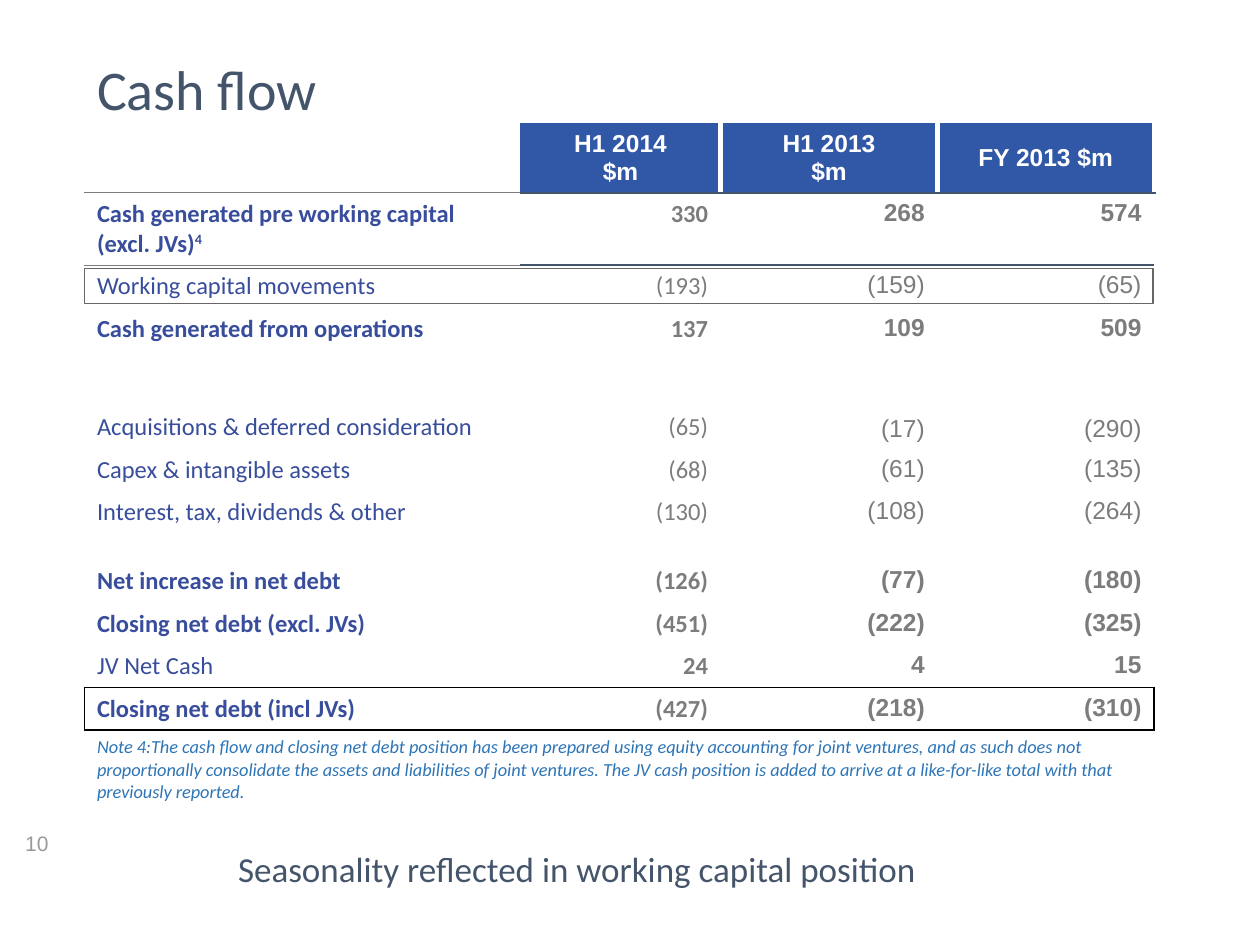
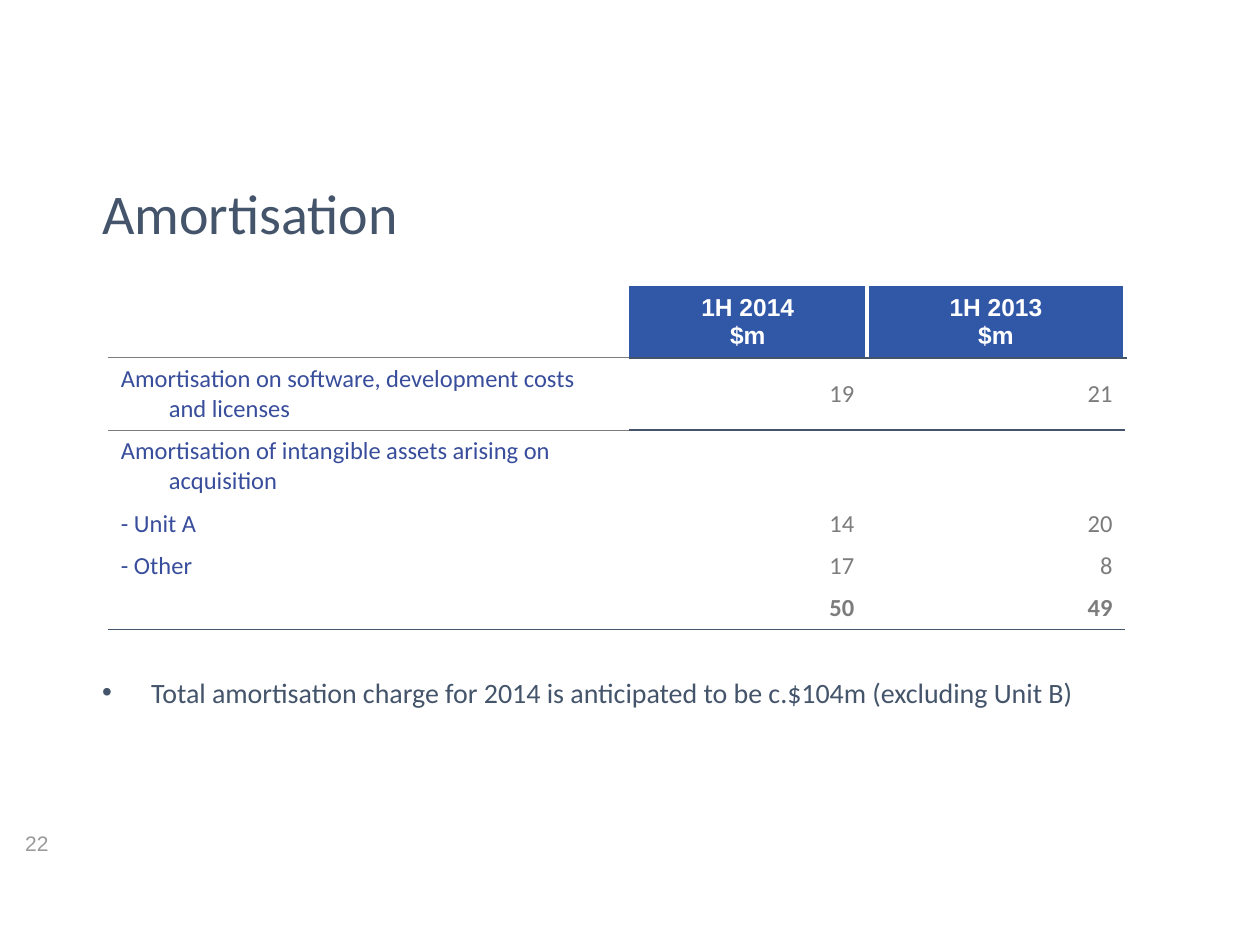
from lxml import etree
from pptx import Presentation
from pptx import util as u
from pptx.dml.color import RGBColor
from pptx.enum import shapes, text
from pptx.oxml.ns import qn

# Shared look
SLATE, BLUE, LABEL, GREY = "44546A", "3157A7", "384D9B", "7C7C7C"
WHITE, BLACK, FRAME, NOTE_BLUE, PAGE_GREY = "FFFFFF", "000000", "666666", "2E75B6", "9A9A9A"
NO_GRID_STYLE = "{2D5ABB26-0587-4C30-8999-92F81FD0307C}"
LEFT, CENTRE, RIGHT = text.PP_ALIGN.LEFT, text.PP_ALIGN.CENTER, text.PP_ALIGN.RIGHT
TOP, MIDDLE, BOTTOM = text.MSO_ANCHOR.TOP, text.MSO_ANCHOR.MIDDLE, text.MSO_ANCHOR.BOTTOM

# Cash flow: label, values, row height, bold label, bold values
CASH_HEADERS = ["", "H1 2014\n$m", "H1 2013\n$m", "FY 2013 $m"]
CASH_WIDTHS = [3.46, 1.59, 1.72, 1.72]
CASH_ROWS = [
    ("Cash generated pre working capital (excl. JVs)^4", ["330", "268", "574"], 0.55, True, True),
    ("Working capital movements", ["(193)", "(159)", "(65)"], 0.33, False, False),
    ("Cash generated from operations", ["137", "109", "509"], 0.55, True, True),
    ("Acquisitions & deferred consideration", ["(65)", "(17)", "(290)"], 0.57, False, False),
    ("Capex & intangible assets", ["(68)", "(61)", "(135)"], 0.33, False, False),
    ("Interest, tax, dividends & other", ["(130)", "(108)", "(264)"], 0.55, False, False),
    ("Net increase in net debt", ["(126)", "(77)", "(180)"], 0.33, True, True),
    ("Closing net debt (excl. JVs)", ["(451)", "(222)", "(325)"], 0.33, True, True),
    ("JV Net Cash", ["24", "4", "15"], 0.33, False, True),
    ("Closing net debt (incl JVs)", ["(427)", "(218)", "(310)"], 0.33, True, True),
]
ACQUISITIONS_ROW, CLOSING_ROW, NOTE_ROW = 4, 10, 11
CASH_NOTE = (
    "Note 4:The cash flow and closing net debt position has been prepared using equity accounting "
    "for joint ventures, and as such does not proportionally consolidate the assets and liabilities "
    "of joint ventures. The JV cash position is added to arrive at a like-for-like total with that "
    "previously reported.")
CASH_MESSAGE = "Seasonality reflected in working capital position"

# Amortisation
AMORTISATION_HEADERS = ["", "1H 2014\n$m", "1H 2013\n$m"]
AMORTISATION_WIDTHS = [4.13, 1.89, 2.05]
AMORTISATION_ROWS = [
    ("Amortisation on software, development costs and licenses", ["19", "21"], 0.57, False, False),
    ("Amortisation of intangible assets arising on acquisition", ["", ""], 0.57, False, False),
    ("- Unit A", ["14", "20"], 0.33, False, False),
    ("- Other", ["17", "8"], 0.33, False, False),
    ("", ["50", "49"], 0.33, False, True),
    ("", ["", ""], 0.33, False, False),
]
TOTAL_ROW = 5
AMORTISATION_BULLET = "Total amortisation charge for 2014 is anticipated to be c.$104m (excluding Unit B)"


def colour(value):
    return RGBColor.from_string(value)


def write(frame, content, size=14, font="Calibri", ink=SLATE, bold=False, italic=False,
          align=LEFT, spacing=None, hang=0, bullet=None):
    """One paragraph per line; text after ^ is superscript."""
    for index, line in enumerate(content.split("\n")):
        para = frame.paragraphs[0] if index == 0 else frame.add_paragraph()
        para.alignment = align
        para.space_before = u.Pt(0)
        if spacing:
            para.line_spacing = spacing
        properties = para._p.get_or_add_pPr()
        properties.set("marL", str(u.Inches(hang)))
        properties.set("indent", str(-u.Inches(hang)))
        if bullet:
            etree.SubElement(properties, qn("a:buFont"), typeface="Arial")
            etree.SubElement(properties, qn("a:buChar"), char=bullet)
        else:
            etree.SubElement(properties, qn("a:buNone"))
        if not line:
            etree.SubElement(para._p, qn("a:endParaRPr"), sz=str(size * 100))
            continue
        for part, words in enumerate(line.split("^")):
            span = para.add_run()
            span.text = words
            span.font.size, span.font.name = u.Pt(size), font
            span.font.bold, span.font.italic = bold, italic
            span.font.color.rgb = colour(ink)
            if part:
                span._r.get_or_add_rPr().set("baseline", "30000")


def place(shape, left, top, width, height):
    shape.left, shape.top = u.Inches(left), u.Inches(top)
    shape.width, shape.height = u.Inches(width), u.Inches(height)


def set_frame(frame, anchor=TOP, inset=None):
    frame.word_wrap = True
    frame.auto_size = text.MSO_AUTO_SIZE.NONE
    frame.vertical_anchor = anchor
    if inset is not None:
        frame.margin_left = frame.margin_right = u.Inches(inset)
        frame.margin_top = frame.margin_bottom = u.Inches(inset)


def add_page(deck, title, title_at, number):
    page = deck.slides.add_slide(deck.slide_layouts[1])
    place(page.shapes.title, *title_at)
    set_frame(page.shapes.title.text_frame, MIDDLE)
    write(page.shapes.title.text_frame, title, size=32, spacing=0.9)
    box = page.shapes.add_textbox(0, 0, 0, 0)
    place(box, 0.2, 6.59, 0.28, 0.43)
    set_frame(box.text_frame, inset=0)
    box.text_frame.word_wrap = False
    write(box.text_frame, number, size=12, font="Arial", ink=PAGE_GREY)
    return page


def rule_below(edges, row, columns, ink, width):
    for column in columns:
        edges.setdefault((row, column), {})["B"] = (ink, width)
        edges.setdefault((row + 1, column), {})["T"] = (ink, width)


def draw_edges(cell, sides):
    properties = cell._tc.get_or_add_tcPr()
    for side in "LRTB":
        if side in sides:
            ink, width = sides[side]
            line = etree.SubElement(properties, qn("a:ln" + side), w=str(u.Pt(width)))
            fill = etree.SubElement(line, qn("a:solidFill"))
            etree.SubElement(fill, qn("a:srgbClr"), val=ink)


def add_figures(page, at, headers, widths, header_height, rows, edges,
                value_fonts, anchor=TOP, hang=0, note=None):
    """Table with blue headings, labels on the left and figures on the right."""
    heights = [header_height] + [row[2] for row in rows] + ([0.91] if note else [])
    graphic = page.shapes.add_table(len(heights), len(widths), u.Inches(at[0]), u.Inches(at[1]),
                                    u.Inches(sum(widths)), u.Inches(sum(heights)))
    for style in graphic.element.iter(qn("a:tableStyleId")):
        style.text = NO_GRID_STYLE
    table = graphic.table
    table.first_row = table.horz_banding = False
    for column, width in zip(table.columns, widths):
        column.width = u.Inches(width)
    for row, height in zip(table.rows, heights):
        row.height = u.Inches(height)

    # Heading rules and white gaps
    last = len(widths) - 1
    rule_below(edges, 0, [0], GREY, 0.5)
    rule_below(edges, 0, range(1, last + 1), SLATE, 1)
    for column in range(1, last + 1):
        edges[0, column]["R"] = (WHITE, 3)
        if column > 1:
            edges[0, column]["L"] = (WHITE, 3)
    for row in range(len(heights)):
        for column in range(len(widths)):
            cell = table.cell(row, column)
            draw_edges(cell, edges.get((row, column), {}))
            if row == 0 and column:
                cell.fill.solid()
                cell.fill.fore_color.rgb = colour(BLUE)
            else:
                cell.fill.background()

    # Text
    for column, heading in enumerate(headers):
        table.cell(0, column).vertical_anchor = MIDDLE
        write(table.cell(0, column).text_frame, heading, font="Arial", ink=WHITE,
              bold=True, align=CENTRE)
    for row, (label, values, _, bold_label, bold_values) in enumerate(rows, 1):
        write(table.cell(row, 0).text_frame, label, ink=LABEL, bold=bold_label, hang=hang)
        for column, (value, font) in enumerate(zip(values, value_fonts), 1):
            write(table.cell(row, column).text_frame, value, font=font, ink=GREY,
                  bold=bold_values, align=RIGHT)
        for column in range(len(widths)):
            table.cell(row, column).vertical_anchor = anchor
    if note:
        row = len(heights) - 1
        table.cell(row, 0).merge(table.cell(row, last))
        write(table.cell(row, 0).text_frame, note, size=10.5, ink=NOTE_BLUE, italic=True)
    return table


def build_cash_flow(deck):
    page = add_page(deck, "Cash flow", (0.67, 0.41, 8.5, 0.65), "10")
    message = page.placeholders[1]
    place(message, 0.71, 6.76, 7.74, 0.44)
    set_frame(message.text_frame, inset=0)
    write(message.text_frame, CASH_MESSAGE, size=20, align=CENTRE, spacing=0.9)

    # Black box round the closing debt row
    edges, columns = {}, range(len(CASH_WIDTHS))
    rule_below(edges, CLOSING_ROW - 1, columns, BLACK, 1)
    rule_below(edges, CLOSING_ROW, columns, BLACK, 1)
    edges[CLOSING_ROW, 0]["L"] = edges[CLOSING_ROW, columns[-1]]["R"] = (BLACK, 1)
    table = add_figures(page, (0.67, 0.98), CASH_HEADERS, CASH_WIDTHS, 0.55, CASH_ROWS, edges,
                        ["Calibri", "Arial", "Arial"], note=CASH_NOTE)
    for column in columns:
        table.cell(ACQUISITIONS_ROW, column).vertical_anchor = BOTTOM

    # Frame round the working capital row
    outline = page.shapes.add_shape(shapes.MSO_SHAPE.RECTANGLE, 0, 0, 0, 0)
    place(outline, 0.67, 2.13, 8.48, 0.28)
    outline.shadow.inherit = False
    outline.fill.background()
    outline.line.color.rgb = colour(FRAME)
    outline.line.width = u.Pt(1)


def build_amortisation(deck):
    page = add_page(deck, "Amortisation", (0.71, 1.39, 8.5, 0.65), "22")
    body = page.placeholders[1]
    place(body, 0.71, 5.31, 8.71, 0.37)
    set_frame(body.text_frame)
    write(body.text_frame, AMORTISATION_BULLET, size=16, hang=0.39, bullet="•")

    edges = {}
    rule_below(edges, TOTAL_ROW, range(len(AMORTISATION_WIDTHS)), SLATE, 1)
    add_figures(page, (0.86, 2.27), AMORTISATION_HEADERS, AMORTISATION_WIDTHS, 0.57,
                AMORTISATION_ROWS, edges, ["Calibri", "Calibri"], anchor=MIDDLE, hang=0.38)


def main():
    deck = Presentation()
    deck.slide_width, deck.slide_height = u.Inches(10), u.Inches(7.5)
    build_cash_flow(deck)
    build_amortisation(deck)
    deck.save("out.pptx")


if __name__ == "__main__":
    main()
